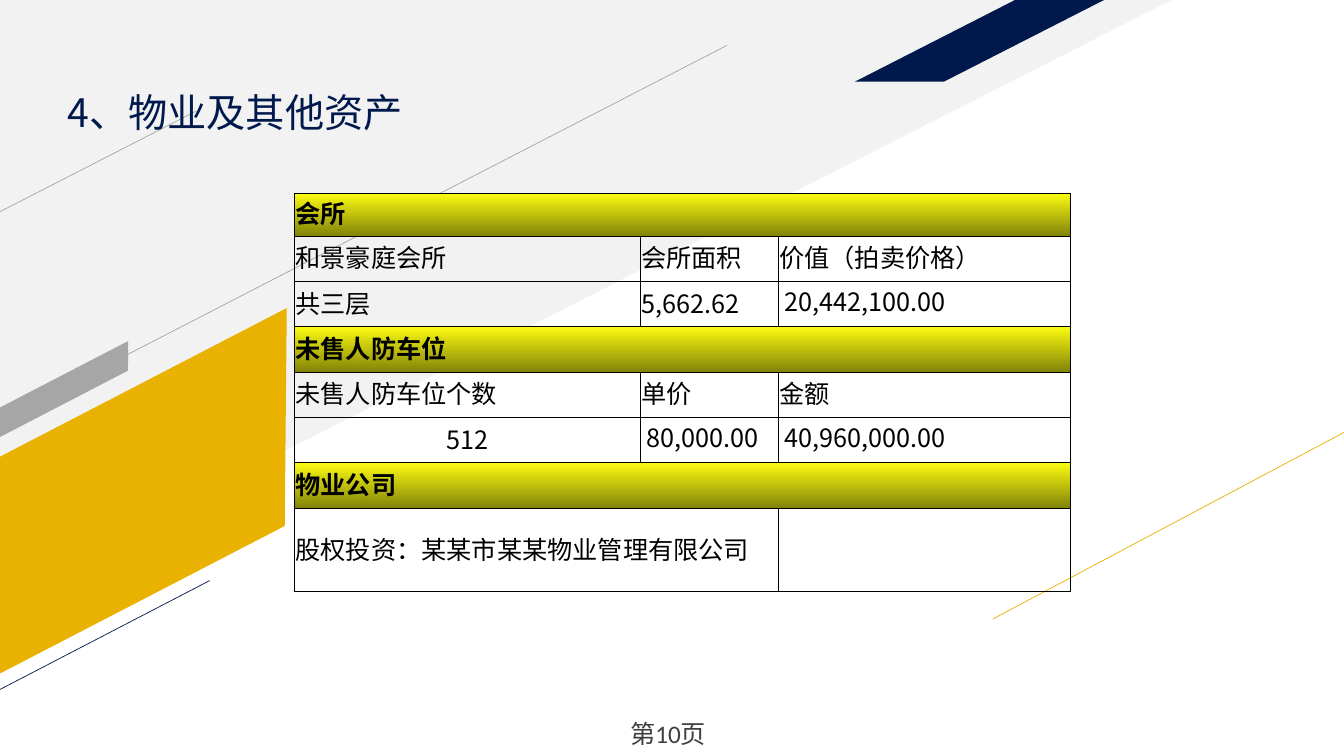
import dataclasses
import typing

import lxml.etree
import pptx
import pptx.dml.color
import pptx.enum.dml
import pptx.enum.shapes
import pptx.enum.text
import pptx.oxml.ns
import pptx.util

Inches = pptx.util.Inches
Pt = pptx.util.Pt
qn = pptx.oxml.ns.qn
Shapes = pptx.enum.shapes.MSO_SHAPE
Anchor = pptx.enum.text.MSO_ANCHOR
Align = pptx.enum.text.PP_ALIGN

CJK = "Noto Sans CJK SC"
NAVY, GOLD, GREY, PALE, BLACK = "00194C", "EAB200", "A6A6A6", "F2F2F2", "000000"
SECTION_GRADIENT = ("FBFB11", "838309")
TILT = 332.6


@dataclasses.dataclass
class Band:
    kind: int
    left: float
    top: float
    width: float
    height: float
    color: str
    slant: float | None = None
    rotation: float = 0
    flipped: bool = False


@dataclasses.dataclass
class Stroke:
    start: tuple[float, float]
    end: tuple[float, float]
    color: str


@dataclasses.dataclass
class Entry:
    text: str
    font: str = "Arial"
    anchor: int = Anchor.MIDDLE
    align: int = Align.LEFT


@dataclasses.dataclass
class AssetRow:
    height: float
    entries: list[Entry]
    section: bool = False


def amount(text: str) -> Entry:
    return Entry(text, CJK, Anchor.TOP)


def section(title: str, height: float = 0.45) -> AssetRow:
    return AssetRow(height, [Entry(title)], True)


DECORATION = [
    Band(Shapes.RIGHT_TRIANGLE, 0, 0, 11.62, 5.91, PALE, flipped=True),
    Band(Shapes.PARALLELOGRAM, -0.7, 3.92, 4.22, 1.91, GOLD, 0.53, TILT),
    Stroke((0, 2.1), (1.95, 1.1), GREY),
    Stroke((9.85, 6.14), (13.33, 4.29), GOLD),
    Band(Shapes.PARALLELOGRAM, 8.48, 0, 2.47, 0.81, NAVY, 1.96),
    Stroke((0, 4.17), (7.21, 0.45), GREY),
    Stroke((-0.02, 6.85), (2.08, 5.76), NAVY),
    Band(Shapes.PARALLELOGRAM, -0.15, 3.73, 1.57, 0.26, GREY, 0.53, TILT),
]

COLUMNS = [3.43, 1.37, 2.9]
ROWS = [
    section("会所", 0.39),
    AssetRow(0.45, [Entry("和景豪庭会所"), Entry("会所面积"), Entry("价值（拍卖价格）")]),
    AssetRow(0.45, [Entry("共三层"), Entry("5,662.62", CJK), amount(" 20,442,100.00")]),
    section("未售人防车位"),
    AssetRow(0.45, [Entry("未售人防车位个数"), Entry("单价"), Entry("金额")]),
    AssetRow(0.45, [Entry("512", CJK, align=Align.CENTER), amount(" 80,000.00"), amount(" 40,960,000.00")]),
    section("物业公司"),
    AssetRow(0.83, [Entry("股权投资：某某市某某物业管理有限公司"), Entry("")]),
]


def rgb(value: str) -> pptx.dml.color.RGBColor:
    return pptx.dml.color.RGBColor.from_string(value)


def apply(target: typing.Any, values: dict[str, typing.Any]) -> None:
    for name, value in values.items():
        setattr(target, name, value)


def write(frame: typing.Any, text: str, font: str, size: float, color: str,
          bold: bool = False, align: int = Align.LEFT) -> typing.Any:
    para = frame.paragraphs[0]
    para.alignment = align
    span = para.add_run()
    span.text = text
    apply(span.font, {"name": font, "size": Pt(size), "bold": bold})
    span.font.color.rgb = rgb(color)
    lxml.etree.SubElement(span.font._element, qn("a:ea"), typeface=CJK)
    return para


def draw_band(page: typing.Any, band: Band) -> None:
    shape = page.shapes.add_shape(
        band.kind, *(Inches(n) for n in (band.left, band.top, band.width, band.height)))
    shape.shadow.inherit = False
    shape.rotation = band.rotation
    shape.fill.solid()
    shape.fill.fore_color.rgb = rgb(band.color)
    shape.line.fill.background()
    if band.slant is not None:
        shape.adjustments[0] = band.slant
    if band.flipped:
        shape.element.spPr.find(qn("a:xfrm")).set("flipV", "1")


def draw_stroke(page: typing.Any, stroke: Stroke) -> None:
    line = page.shapes.add_connector(
        pptx.enum.shapes.MSO_CONNECTOR.STRAIGHT,
        *(Inches(n) for n in stroke.start + stroke.end))
    line.line.width = Pt(0.5)
    line.line.color.rgb = rgb(stroke.color)
    lxml.etree.SubElement(line.element.spPr, qn("a:effectLst"))


def draw_borders(cell: typing.Any, widths: dict[str, float]) -> None:
    properties = cell._tc.get_or_add_tcPr()
    for side, width in widths.items():
        edge = lxml.etree.SubElement(properties, qn(f"a:ln{side}"), w=str(Pt(width)))
        fill = lxml.etree.SubElement(edge, qn("a:solidFill"))
        lxml.etree.SubElement(fill, qn("a:srgbClr"), val=BLACK)


def fill_cell(cell: typing.Any, is_section: bool) -> None:
    if not is_section:
        cell.fill.background()
        return
    cell.fill.gradient()
    cell.fill.gradient_angle = 270
    for stop, color in zip(cell.fill.gradient_stops, SECTION_GRADIENT):
        stop.color.rgb = rgb(color)


def draw_assets(page: typing.Any) -> None:
    frame = page.shapes.add_table(
        len(ROWS), len(COLUMNS), Inches(2.92), Inches(1.92),
        Inches(sum(COLUMNS)), Inches(sum(row.height for row in ROWS)))
    table = frame.table
    apply(table, {"first_row": False, "horz_banding": False})
    for column, width in zip(table.columns, COLUMNS):
        column.width = Inches(width)
    last = len(COLUMNS) - 1
    for index, row in enumerate(ROWS):
        table.rows[index].height = Inches(row.height)
        cells = [table.cell(index, column) for column in range(len(COLUMNS))]
        for column, cell in enumerate(cells):
            draw_borders(cell, {
                "L": 0.5 if column else 1,
                "R": 1 if column == last else 0.5,
                "T": 1 if row.section else 0.5,
                "B": 1 if index + 1 == len(ROWS) or ROWS[index + 1].section else 0.5})
            fill_cell(cell, row.section)
            apply(cell, {"margin_left": Inches(0.01), "margin_right": Inches(0.01),
                         "margin_top": Inches(0.01), "margin_bottom": Inches(0.05)})
        spare = len(COLUMNS) - len(row.entries)
        if spare:
            cells[0].merge(cells[spare])
        for cell, entry in zip(cells[:1] + cells[spare + 1:], row.entries):
            cell.vertical_anchor = entry.anchor
            if entry.text:
                write(cell.text_frame, entry.text, entry.font, 18, BLACK, row.section, entry.align)


def draw_title(page: typing.Any) -> None:
    title = page.shapes.title
    title.element.getparent().append(title.element)
    apply(title, {"left": Inches(0.57), "top": Inches(0.78),
                  "width": Inches(5.76), "height": Inches(0.57)})
    apply(title.text_frame, {"vertical_anchor": Anchor.BOTTOM, "margin_bottom": 0,
                             "auto_size": pptx.enum.text.MSO_AUTO_SIZE.NONE})
    write(title.text_frame, "4、物业及其他资产", CJK, 28, NAVY).line_spacing = 0.9


def draw_page_number(page: typing.Any) -> None:
    box = page.shapes.add_textbox(Inches(5.15), Inches(7.08), Inches(2.78), Inches(0.4))
    apply(box.text_frame, {"word_wrap": True, "margin_left": Inches(1.1)})
    write(box.text_frame, "第10页", "Calibri", 18, "3F3F3F")


def main() -> None:
    deck = pptx.Presentation()
    apply(deck, {"slide_width": Inches(13.33), "slide_height": Inches(7.5)})
    page = deck.slides.add_slide(deck.slide_layouts[5])
    for item in DECORATION:
        if isinstance(item, Band):
            draw_band(page, item)
        else:
            draw_stroke(page, item)
    draw_title(page)
    draw_assets(page)
    draw_page_number(page)
    deck.save("out.pptx")


if __name__ == "__main__":
    main()
